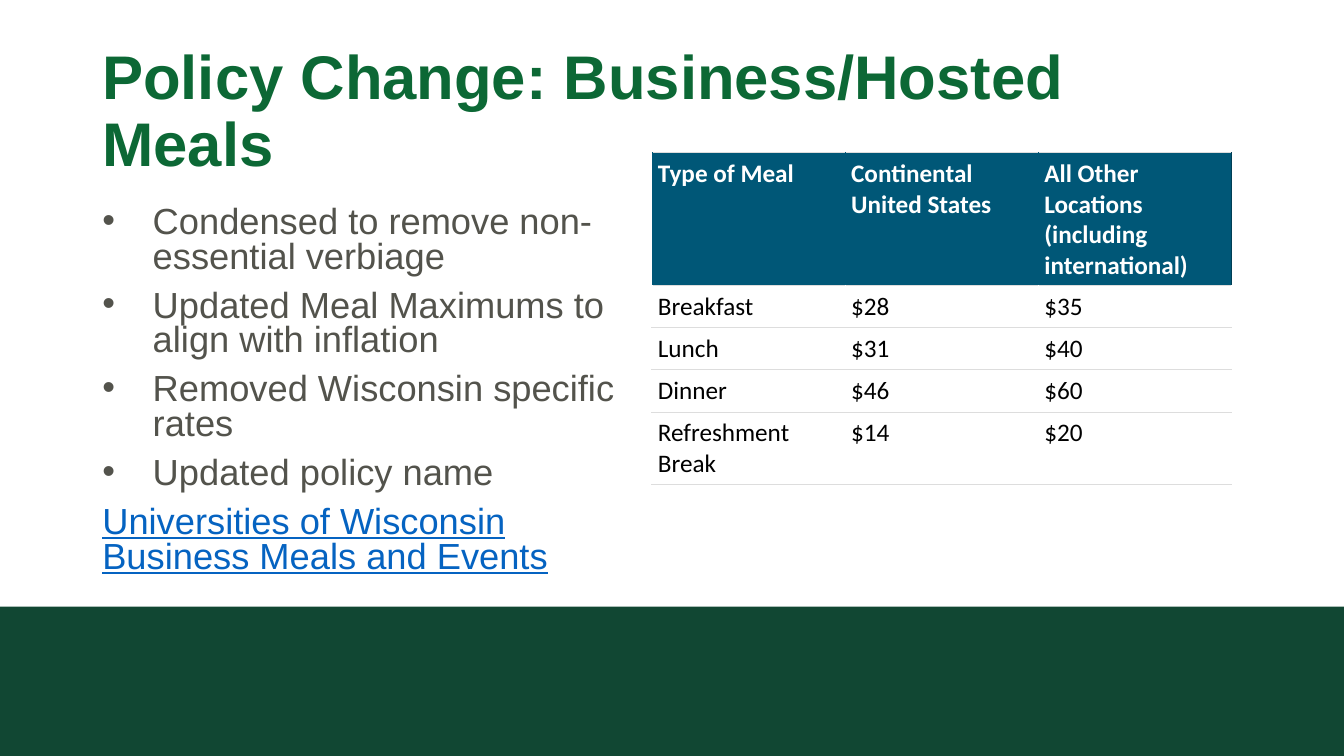
from lxml import etree
from pptx import Presentation
from pptx.dml.color import RGBColor
from pptx.enum.shapes import MSO_SHAPE
from pptx.enum.text import MSO_ANCHOR
from pptx.oxml.ns import qn
from pptx.util import Cm, Pt

RECTANGLE = MSO_SHAPE.RECTANGLE
TOP = MSO_ANCHOR.TOP
MIDDLE = MSO_ANCHOR.MIDDLE

GREEN = "0C6835"
DARK_GREEN = "114733"
GREY = "53534C"
LINK_BLUE = "0563C1"
HEADER_BLUE = "005777"
HEADER_EDGE = "003E55"
RULE_GREY = "DDDDDD"
WHITE = "FFFFFF"
BLACK = "000000"

POLICY_CHANGES = [
    "Condensed to remove non-essential verbiage",
    "Updated Meal Maximums to align with inflation",
    "Removed Wisconsin specific rates",
    "Updated policy name",
]
POLICY_TITLE = "Universities of Wisconsin Business Meals and Events"
MEAL_RATES = [
    ["Type of Meal", "Continental United States",
     "All Other Locations (including international)"],
    ["Breakfast", "$28", "$35"],
    ["Lunch", "$31", "$40"],
    ["Dinner", "$46", "$60"],
    ["Refreshment Break", "$14", "$20"],
]
ROW_HEIGHTS = [2.8, 0.92, 0.92, 0.92, 1.53]
COLUMN_WIDTH = 4.87
CELL_MARGIN = 0.15


def color(value):
    return RGBColor.from_string(value)


def add_bullet(para, indent):
    properties = para._p.get_or_add_pPr()
    properties.set("marL", str(Cm(indent)))
    properties.set("indent", str(-Cm(indent)))
    etree.SubElement(properties, qn("a:buFont"), typeface="Arial")
    etree.SubElement(properties, qn("a:buChar"), char="•")


def write(para, text, *, size, ink, font="Arial", bold=False, underline=False,
          line_spacing=None, before=0, bullet_indent=None):
    if bullet_indent:
        add_bullet(para, bullet_indent)
    if line_spacing:
        para.line_spacing = line_spacing
    if before:
        para.space_before = Pt(before)
    span = para.add_run()
    span.text = text
    span.font.name = font
    span.font.size = Pt(size)
    span.font.bold = bold
    span.font.underline = underline
    span.font.color.rgb = color(ink)


def add_band(page, left, top, width, height, fill):
    band = page.shapes.add_shape(RECTANGLE, Cm(left), Cm(top), Cm(width), Cm(height))
    band.shadow.inherit = False
    band.fill.solid()
    band.fill.fore_color.rgb = color(fill)
    band.line.fill.background()


def add_text_frame(page, left, top, width, height, anchor=TOP):
    box = page.shapes.add_textbox(Cm(left), Cm(top), Cm(width), Cm(height))
    frame = box.text_frame
    frame.word_wrap = True
    frame.vertical_anchor = anchor
    return frame


def set_borders(cell, borders):
    properties = cell._tc.get_or_add_tcPr()
    for position, (side, (ink, width)) in enumerate(borders.items()):
        line = etree.Element(qn(f"a:ln{side}"), w=str(Pt(width)))
        fill = etree.SubElement(line, qn("a:solidFill"))
        etree.SubElement(fill, qn("a:srgbClr"), val=ink)
        properties.insert(position, line)


def fill_cell(cell, text, is_header, is_last):
    cell.margin_left = cell.margin_right = Cm(CELL_MARGIN)
    cell.margin_top = cell.margin_bottom = Cm(CELL_MARGIN)
    cell.fill.solid()
    cell.fill.fore_color.rgb = color(HEADER_BLUE if is_header else WHITE)
    borders = {}
    if is_header:
        borders["L"] = (HEADER_BLUE, 0.5)
        borders["R"] = (HEADER_EDGE, 1) if is_last else (HEADER_BLUE, 0.5)
    borders["T"] = borders["B"] = (RULE_GREY, 0.5)
    set_borders(cell, borders)
    write(cell.text_frame.paragraphs[0], text, size=18, font="Calibri",
          ink=WHITE if is_header else BLACK, bold=is_header)


def add_rate_table(page, left, top, rates):
    columns = len(rates[0])
    frame = page.shapes.add_table(len(rates), columns, Cm(left), Cm(top),
                                  Cm(COLUMN_WIDTH * columns), Cm(sum(ROW_HEIGHTS)))
    table = frame.table
    table.horz_banding = False
    for column in table.columns:
        column.width = Cm(COLUMN_WIDTH)
    for row_index, values in enumerate(rates):
        table.rows[row_index].height = Cm(ROW_HEIGHTS[row_index])
        for column_index, value in enumerate(values):
            fill_cell(table.cell(row_index, column_index), value,
                      row_index == 0, column_index == columns - 1)


def add_policy_list(page):
    frame = add_text_frame(page, 2.33, 5.08, 14.6, 9.86)
    body = {"size": 25.9, "line_spacing": 0.8}
    for index, change in enumerate(POLICY_CHANGES):
        para = frame.add_paragraph() if index else frame.paragraphs[0]
        write(para, change, ink=GREY, bullet_indent=1.27,
              before=10 if index else 0, **body)
    write(frame.add_paragraph(), POLICY_TITLE, ink=LINK_BLUE, underline=True,
          before=10, **body)


def main():
    deck = Presentation()
    deck.slide_width = Cm(33.87)
    deck.slide_height = Cm(19.05)
    page = deck.slides.add_slide(deck.slide_layouts[6])
    add_band(page, 0, 15.29, 33.87, 3.76, DARK_GREEN)
    title = add_text_frame(page, 2.33, 1.01, 29.21, 3.68, anchor=MIDDLE)
    write(title.paragraphs[0], "Policy Change: Business/Hosted Meals",
          size=44, ink=GREEN, bold=True, line_spacing=0.9)
    add_policy_list(page)
    add_rate_table(page, 16.43, 3.84, MEAL_RATES)
    deck.save("out.pptx")


if __name__ == "__main__":
    main()
